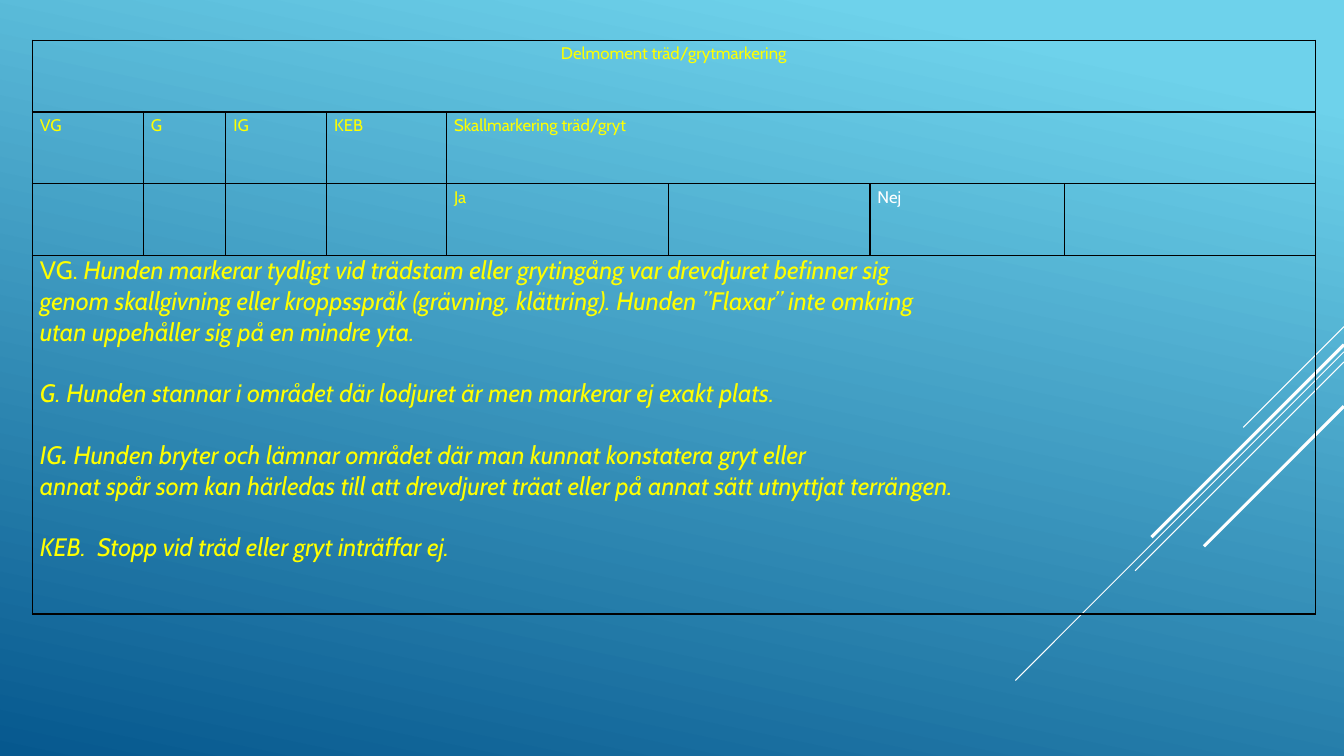
from lxml import etree
from pptx import Presentation
from pptx import util as u
from pptx.dml import color
from pptx.enum import shapes, text
from pptx.oxml import ns

FONT = "Cabin"
YELLOW = "FFFF00"
WHITE = "FFFFFF"
BLACK = "000000"
COLUMN_WIDTHS = [79.2, 59, 72, 85.7, 158.4, 144, 139, 179.3]
ROW_HEIGHTS = [51.2, 51.2, 51.2, 256.2]
GRADES = ["VG", "G", "IG", "KEB"]
RIGHT_EDGE = 960
DIAGONALS = [
    (233.3, 72, 0.75),
    (251.3, 234.7, 0.75),
    (258.5, 149.2, 0.75),
    (246.2, 137.5, 2.25),
    (290.2, 100, 2.25),
]
ITALIC = {"italic": True}
CRITERIA = [
    (0, [("VG. ", {}),
         ("Hunden markerar tydligt vid trädstam eller grytingång var drevdjuret befinner sig", ITALIC)]),
    (0, [("genom skallgivning eller kroppsspråk (grävning, klättring). Hunden ”Flaxar” inte omkring", ITALIC)]),
    (0, [("utan uppehåller sig på en mindre yta.", ITALIC)]),
    (22, [("G. Hunden stannar i området där lodjuret är men markerar ej exakt plats.", ITALIC)]),
    (22, [("IG", ITALIC), (".", {"italic": True, "bold": True}),
          (" Hunden bryter och lämnar området där man kunnat konstatera gryt eller", ITALIC)]),
    (0, [("annat spår som kan härledas till att drevdjuret träat eller på annat sätt utnyttjat terrängen.", ITALIC)]),
    (22, [("KEB.  Stopp vid träd eller gryt inträffar ej.", ITALIC)]),
]


def rgb(value):
    return color.RGBColor.from_string(value)


def add_text(paragraph, content, size=12, fill=YELLOW, bold=False, italic=False):
    run = paragraph.add_run()
    run.text = content
    run.font.name = FONT
    run.font.size = u.Pt(size)
    run.font.bold = bold
    run.font.italic = italic
    run.font.color.rgb = rgb(fill)


def paint_background(slide):
    fill = slide.background.fill
    fill.gradient()
    fill.gradient_angle = 258
    for stop, position, value in zip(fill.gradient_stops, (0.1, 1), ("6ED2EB", "06588E")):
        stop.position = position
        stop.color.rgb = rgb(value)


def add_diagonal(slide, top, reach, width):
    line = slide.shapes.add_connector(
        shapes.MSO_CONNECTOR.STRAIGHT, u.Pt(RIGHT_EDGE), u.Pt(top),
        u.Pt(RIGHT_EDGE - reach), u.Pt(top + reach))
    line.line.color.rgb = rgb(WHITE)
    line.line.width = u.Pt(width)
    etree.SubElement(line._element.spPr, ns.qn("a:effectLst"))


def format_cell(cell):
    properties = cell._tc.get_or_add_tcPr()
    for side in ("lnL", "lnR", "lnT", "lnB"):
        border = etree.SubElement(properties, ns.qn("a:" + side), w=str(u.Pt(1)))
        solid = etree.SubElement(border, ns.qn("a:solidFill"))
        etree.SubElement(solid, ns.qn("a:srgbClr"), val=BLACK)
    cell.fill.background()
    cell.margin_left = cell.margin_right = u.Pt(5.4)
    cell.margin_top = cell.margin_bottom = 0


def add_table(slide):
    frame = slide.shapes.add_table(
        len(ROW_HEIGHTS), len(COLUMN_WIDTHS), u.Pt(23.1), u.Pt(28.8),
        u.Pt(sum(COLUMN_WIDTHS)), u.Pt(sum(ROW_HEIGHTS)))
    table = frame.table
    table.first_row = table.horz_banding = False
    for column, width in zip(table.columns, COLUMN_WIDTHS):
        column.width = u.Pt(width)
    for row, height in zip(table.rows, ROW_HEIGHTS):
        row.height = u.Pt(height)
    for cell in table.iter_cells():
        format_cell(cell)
    for row, first_column in ((0, 0), (1, 4), (3, 0)):
        table.cell(row, first_column).merge(table.cell(row, len(COLUMN_WIDTHS) - 1))
    return table


def write_label(cell, content, alignment=text.PP_ALIGN.LEFT, **text_format):
    paragraph = cell.text_frame.paragraphs[0]
    paragraph.alignment = alignment
    paragraph.line_spacing = 1.15
    paragraph.space_after = u.Pt(8)
    add_text(paragraph, content, **text_format)


def write_criteria(cell):
    frame = cell.text_frame
    for index, (gap, runs) in enumerate(CRITERIA):
        paragraph = frame.add_paragraph() if index else frame.paragraphs[0]
        if gap:
            paragraph.space_before = u.Pt(gap)
        for content, text_format in runs:
            add_text(paragraph, content, size=18, **text_format)


def main():
    presentation = Presentation()
    presentation.slide_width = u.Pt(RIGHT_EDGE)
    presentation.slide_height = u.Pt(540)
    slide = presentation.slides.add_slide(presentation.slide_layouts[6])
    paint_background(slide)
    for top, reach, width in DIAGONALS:
        add_diagonal(slide, top, reach, width)
    table = add_table(slide)
    write_label(table.cell(0, 0), "Delmoment träd/grytmarkering", alignment=text.PP_ALIGN.CENTER)
    for column, heading in enumerate(GRADES + ["Skallmarkering träd/gryt"]):
        write_label(table.cell(1, column), heading)
    write_label(table.cell(2, 4), "Ja")
    write_label(table.cell(2, 6), "Nej", fill=WHITE)
    write_criteria(table.cell(3, 0))
    presentation.save("out.pptx")


if __name__ == "__main__":
    main()
